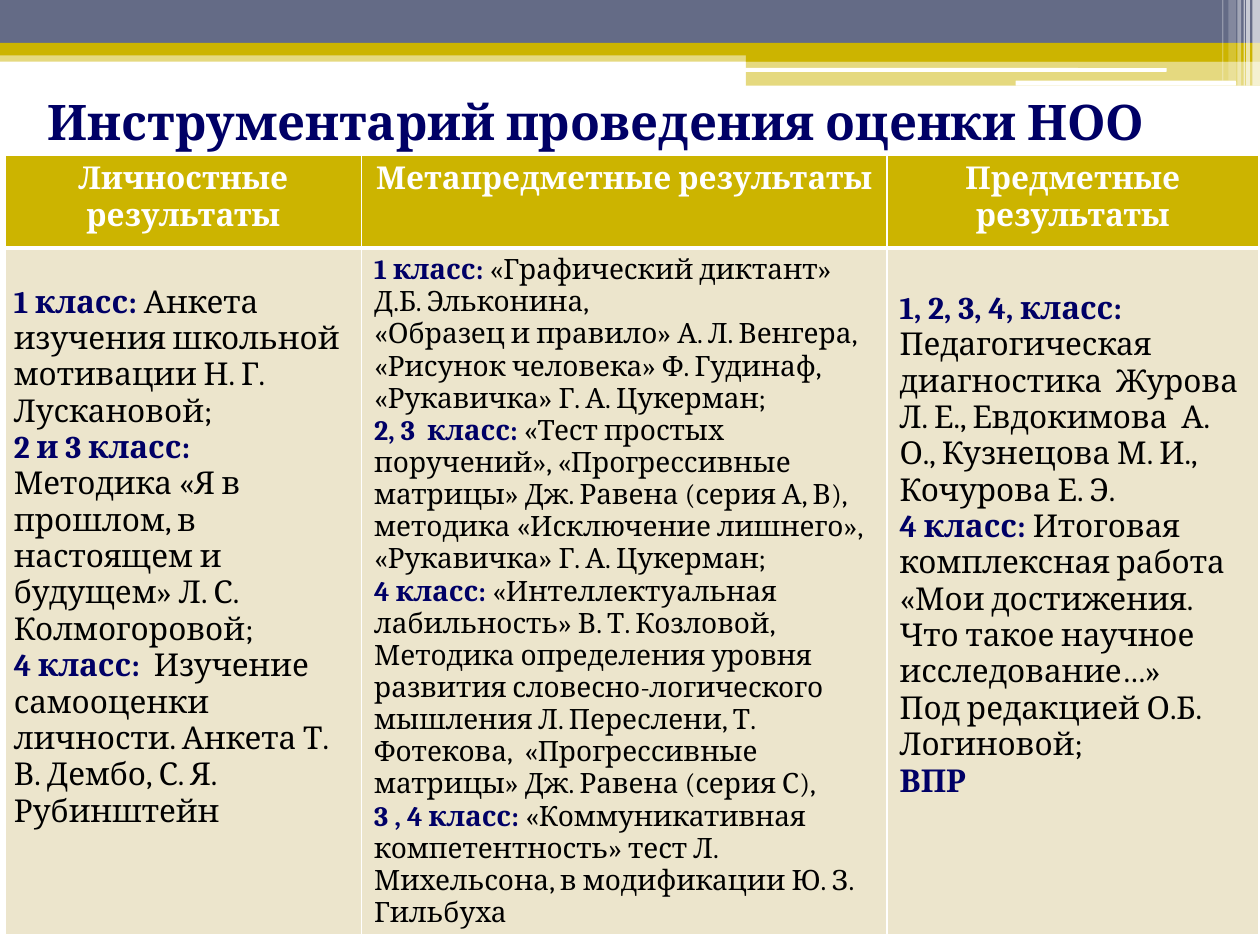
from lxml.etree import SubElement
from pptx import Presentation
from pptx.dml.color import RGBColor
from pptx.enum.shapes import MSO_SHAPE
from pptx.enum.text import MSO_ANCHOR, MSO_AUTO_SIZE, PP_ALIGN
from pptx.oxml import parse_xml
from pptx.oxml.ns import nsdecls, qn
from pptx.util import Inches, Pt

FONT = "Cambria"
NAVY, GOLD, SLATE, SAND = "000066", "CCB400", "646B86", "ECE5CC"
WHITE, BLACK = "FFFFFF", "000000"


def paint(fill, color, opacity=100):
    fill.solid()
    fill.fore_color.rgb = RGBColor.from_string(color)
    if opacity < 100:
        color_node = fill._xPr.find(qn("a:solidFill"))[0]
        SubElement(color_node, qn("a:alpha"), val=str(opacity * 1000))


deck = Presentation()
deck.slide_width, deck.slide_height = Inches(10), Inches(7.5)
page = deck.slides.add_slide(deck.slide_layouts[5])

# Top bands, thin white bars and the stripes in the corner
RECT, ROUND = MSO_SHAPE.RECTANGLE, MSO_SHAPE.ROUNDED_RECTANGLE
decorations = [
    (RECT, 0, 0.4, 10, 0.09, GOLD, 50),
    (RECT, 0, 0, 10, 0.34, SLATE, 100),
    (RECT, 0, 0.34, 10, 0.1, GOLD, 100),
    (RECT, 5.92, 0.39, 4.08, 0.1, GOLD, 100),
    (RECT, 5.92, 0.48, 4.08, 0.2, GOLD, 50),
    (ROUND, 5.91, 0.54, 3.35, 0.03, WHITE, 100),
    (ROUND, 8.06, 0.64, 1.75, 0.04, WHITE, 100),
    (RECT, 9.94, 0, 0.06, 0.68, WHITE, 65),
    (RECT, 9.89, 0, 0.03, 0.68, WHITE, 65),
    (RECT, 9.87, 0, 0.01, 0.68, WHITE, 60),
    (RECT, 9.82, 0, 0.03, 0.68, WHITE, 40),
    (RECT, 9.75, 0, 0.06, 0.64, WHITE, 20),
    (RECT, 9.7, 0, 0.01, 0.64, WHITE, 30),
]
for kind, left, top, width, height, color, opacity in decorations:
    band = page.shapes.add_shape(
        kind, Inches(left), Inches(top), Inches(width), Inches(height))
    band.shadow.inherit = False
    band.line.fill.background()
    paint(band.fill, color, opacity)

# Title
title = page.shapes.title
title.left, title.top = Inches(0.28), Inches(0.68)
title.width, title.height = Inches(9.45), Inches(0.57)
frame = title.text_frame
frame.text = "Инструментарий проведения оценки НОО"
frame.word_wrap = True
frame.auto_size = MSO_AUTO_SIZE.NONE
frame.vertical_anchor = MSO_ANCHOR.TOP
para = frame.paragraphs[0]
para.alignment = PP_ALIGN.LEFT
para.font.name, para.font.size, para.font.bold = FONT, Pt(28), True
para.font.color.rgb = RGBColor.from_string(NAVY)

# Columns: heading, width, text size, side margin, top margin, (label, text) lines
columns = [
    ("Личностные результаты", 2.83, 18, 0.07, 0.29, [
        ("1 класс: ", "Анкета изучения школьной мотивации Н. Г. Лускановой;"),
        ("2 и 3 класс: ", "Методика «Я в прошлом, в настоящем и будущем» "
                          "Л. С. Колмогоровой;"),
        ("4 класс:  ", "Изучение самооценки личности. Анкета Т. В. Дембо, "
                       "С. Я. Рубинштейн"),
    ]),
    ("Метапредметные результаты", 4.17, 16, 0.1, 0.05, [
        ("1 класс: ", "«Графический диктант» Д.Б. Эльконина,"),
        ("", "«Образец и правило» А. Л. Венгера, «Рисунок человека» "
             "Ф. Гудинаф, «Рукавичка» Г. А. Цукерман;"),
        ("2, 3  класс: ", "«Тест простых поручений», «Прогрессивные матрицы» "
                          "Дж. Равена (серия А, В), методика «Исключение "
                          "лишнего»,  «Рукавичка» Г. А. Цукерман;"),
        ("4 класс: ", "«Интеллектуальная лабильность» В. Т. Козловой, "
                      "Методика определения уровня развития "
                      "словесно-логического мышления Л. Переслени, "
                      "Т. Фотекова,  «Прогрессивные матрицы» Дж. Равена "
                      "(серия С),"),
        ("3 , 4 класс: ", "«Коммуникативная компетентность» тест "
                          "Л. Михельсона, в модификации Ю. З. Гильбуха"),
    ]),
    ("Предметные результаты", 2.95, 18, 0.1, 0.34, [
        ("1, 2, 3, 4, класс: ", "Педагогическая диагностика  Журова Л. Е., "
                                "Евдокимова  А. О., Кузнецова М. И., "
                                "Кочурова Е. Э."),
        ("4 класс: ", "Итоговая комплексная работа «Мои достижения. "
                      "Что такое научное исследование…»"),
        ("", "Под редакцией О.Б. Логиновой;"),
        ("ВПР", ""),
    ]),
]

# Table
table = page.shapes.add_table(
    2, len(columns), Inches(0.04), Inches(1.23), Inches(9.95), Inches(6.19)).table
table.rows[0].height, table.rows[1].height = Inches(0.74), Inches(5.45)

for index, (heading, width, size, side, top, lines) in enumerate(columns):
    table.columns[index].width = Inches(width)
    header, body = table.cell(0, index), table.cell(1, index)

    header.text = heading
    para = header.text_frame.paragraphs[0]
    para.alignment = PP_ALIGN.CENTER
    para.font.name, para.font.size, para.font.bold = FONT, Pt(18), True
    para.font.color.rgb = RGBColor.from_string(WHITE)

    body.margin_left = body.margin_right = Inches(side)
    body.margin_top = Inches(top)
    body.margin_bottom = Inches(0)
    for number, line in enumerate(lines):
        frame = body.text_frame
        para = frame.add_paragraph() if number else frame.paragraphs[0]
        para.font.name, para.font.size = FONT, Pt(size)
        for text, color, bold in zip(line, (NAVY, BLACK), (True, False)):
            if text:
                span = para.add_run()
                span.text = text
                span.font.name, span.font.size = FONT, Pt(size)
                span.font.bold = bold
                span.font.color.rgb = RGBColor.from_string(color)

    # Fills and white borders, thicker under the header
    for cell, color, thick_side in ((header, GOLD, "lnB"), (body, SAND, "lnT")):
        paint(cell.fill, color)
        properties = cell._tc.get_or_add_tcPr()
        for place, edge in enumerate(("lnL", "lnR", "lnT", "lnB")):
            weight = Pt(3 if edge == thick_side else 1)
            properties.insert(place, parse_xml(
                f'<a:{edge} {nsdecls("a")} w="{weight}"><a:solidFill>'
                f'<a:srgbClr val="{WHITE}"/></a:solidFill></a:{edge}>'))

deck.save("out.pptx")
